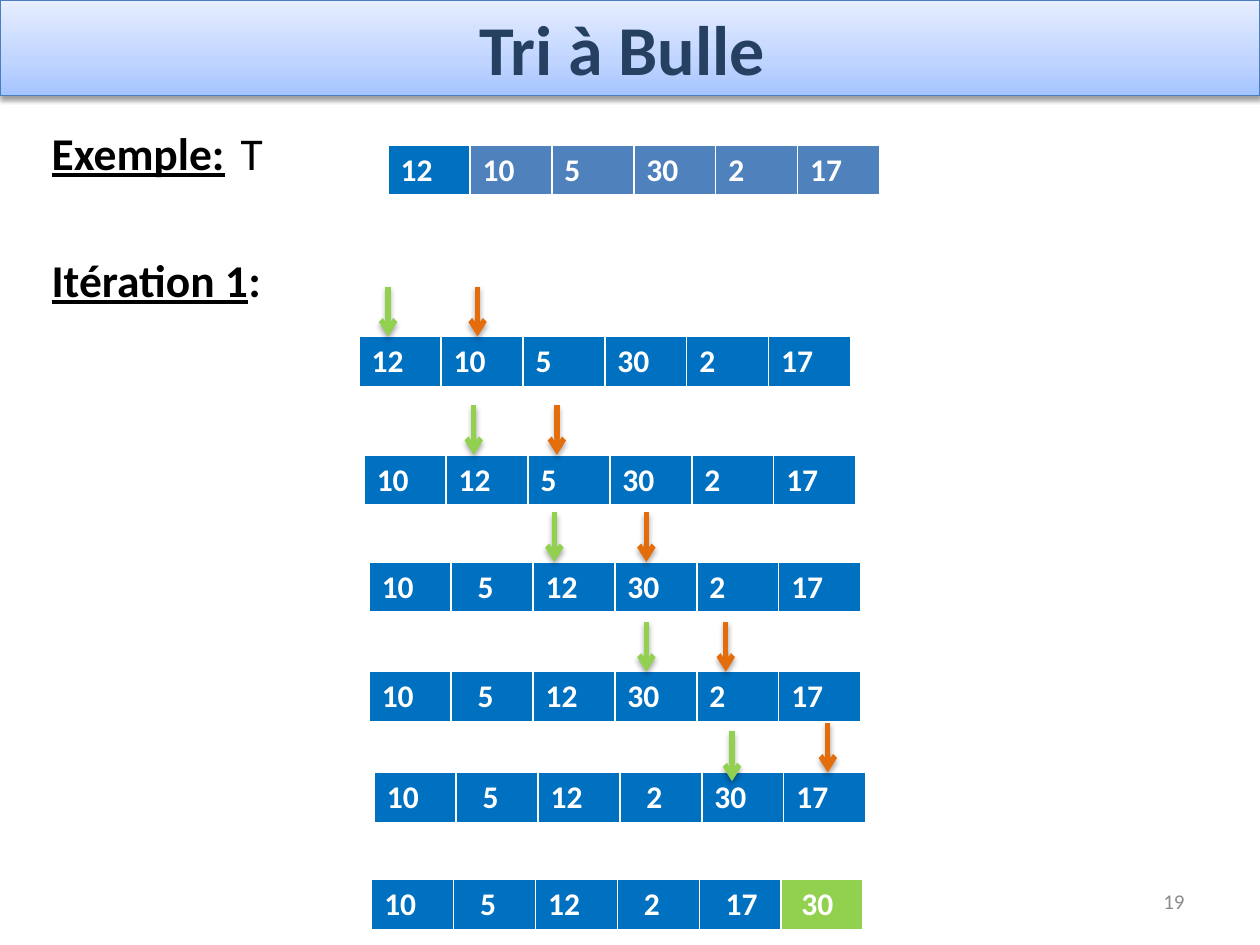
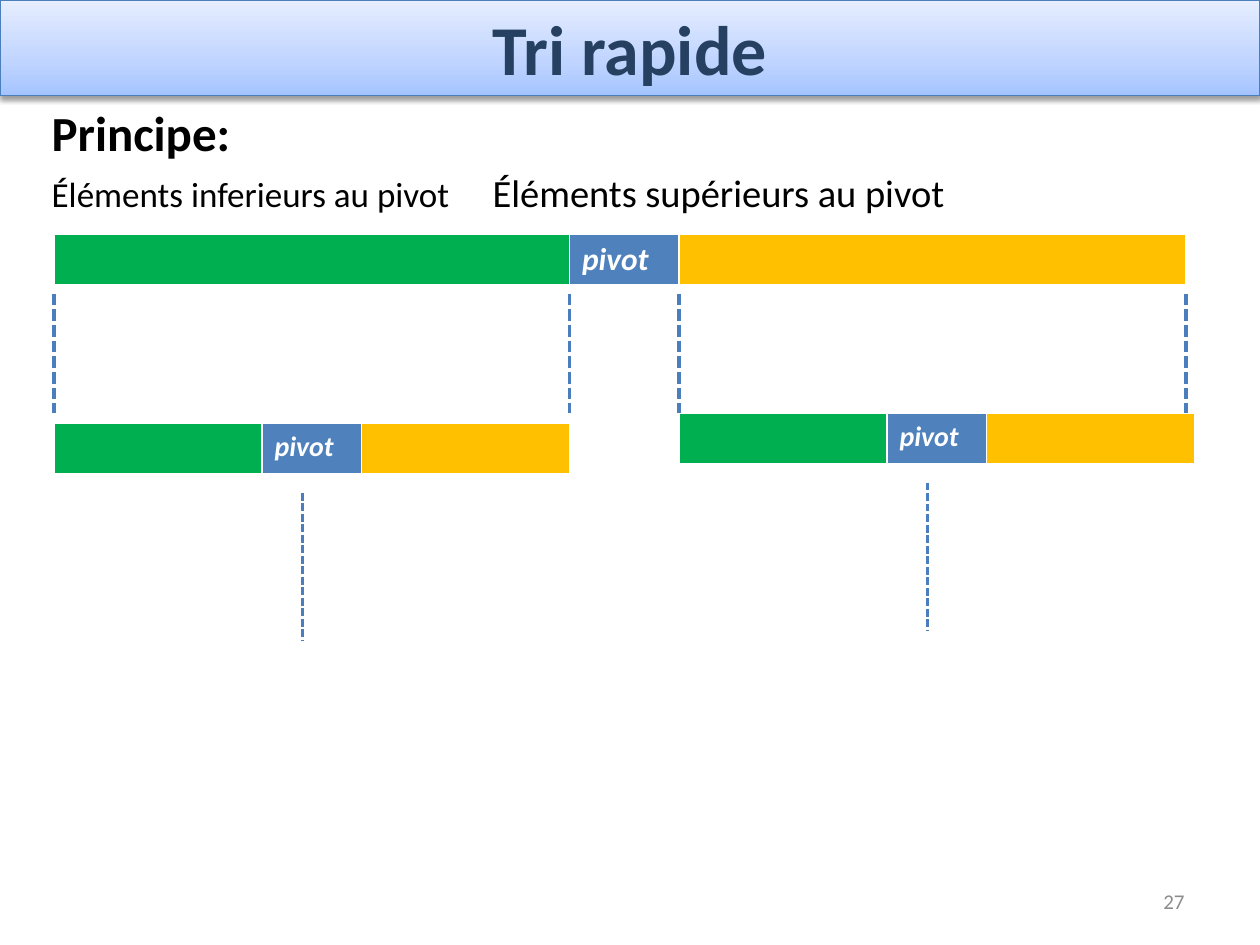
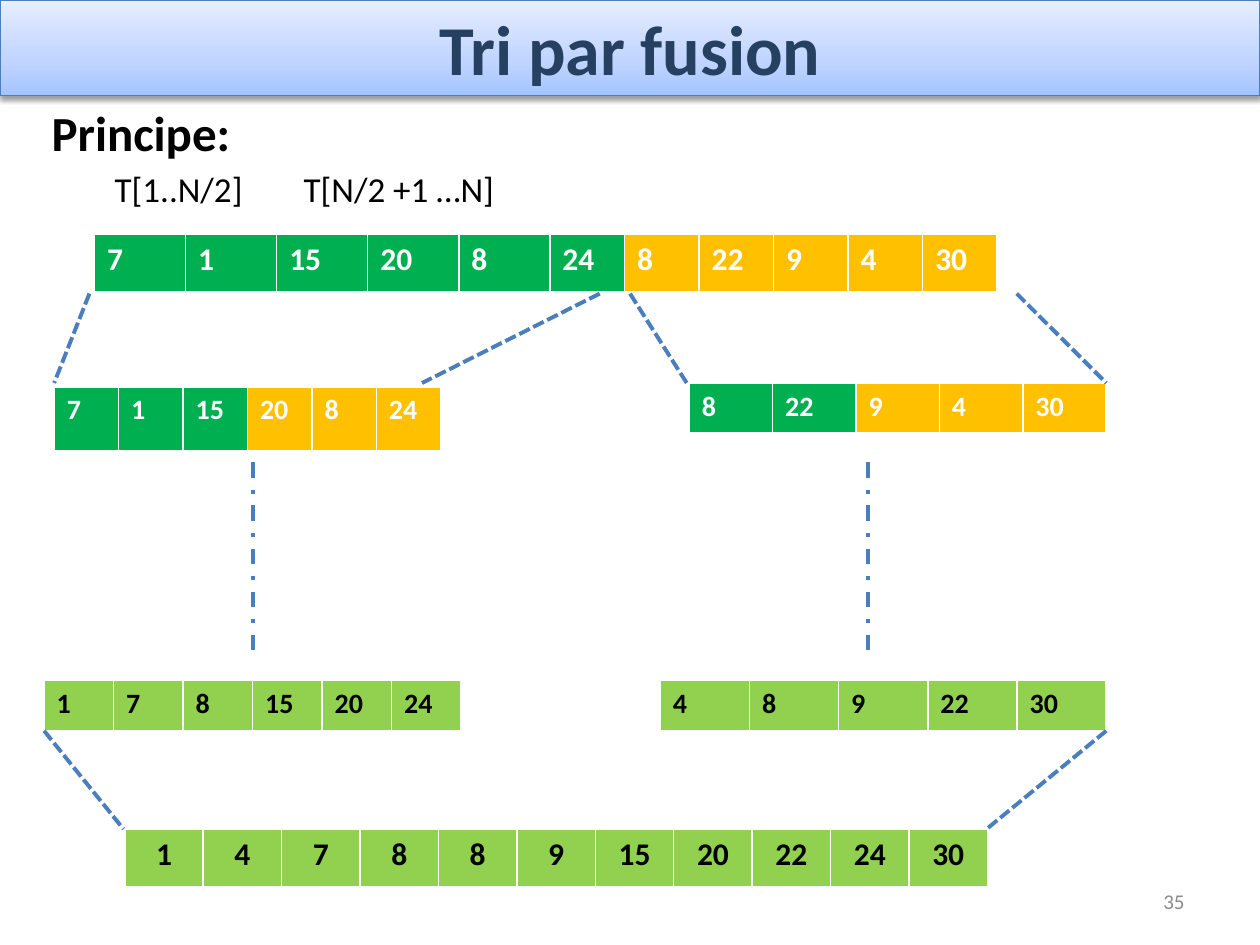
import collections
import copy
import itertools

import pptx
import pptx.dml.color
import pptx.enum.dml
import pptx.enum.shapes
import pptx.enum.text
import pptx.oxml
import pptx.oxml.ns
import pptx.util

SLIDE_WIDTH = pptx.util.Inches(10)
SLIDE_HEIGHT = pptx.util.Inches(7.5)
COLUMN = SLIDE_WIDTH / 100
ROW = SLIDE_HEIGHT / 75
FONT = "Calibri"
COLORS = {
    "title": "254061", "text": "000000", "white": "FFFFFF", "number": "8C8C8C",
    "line": "4B7EBC", "blue": "0070C0", "accent": "4F81BD", "green": "00B050",
    "amber": "FFC000", "lime": "92D050", "orange": "E46C0A",
}
BAND_STOPS = [(0, "A4C4FF"), (0.35, "BFD4FF"), (1, "E6EEFF")]
BORDERS = {"lnL": 12700, "lnR": 12700, "lnT": 12700, "lnB": 38100}
ALIGN = pptx.enum.text.PP_ALIGN
DASH = pptx.enum.dml.MSO_LINE
MIDDLE = pptx.enum.text.MSO_ANCHOR.MIDDLE
SHADOW = (
    '<a:outerShdw blurRad="40000" dist="{distance}" dir="5400000" rotWithShape="0">'
    '<a:srgbClr val="000000"><a:alpha val="{alpha}"/></a:srgbClr></a:outerShdw>'
)
BODY_FORMAT = {"size": 26, "bold": True}


class Box(collections.namedtuple("Box", "left top width height")):
    def within(self, left, top, width=0, height=0):
        return Box(self.left + left, self.top + top, width, height)

    def frame(self):
        return {
            "left": columns(self.left), "top": rows(self.top),
            "width": columns(self.width), "height": rows(self.height),
        }


def columns(count):
    return round(count * COLUMN)


def rows(count):
    return round(count * ROW)


def rgb(name):
    return pptx.dml.color.RGBColor.from_string(COLORS[name])


def assign(target, values):
    for name, value in values.items():
        setattr(target, name, value)


def append_xml(parent, tag, attributes="", content=""):
    namespace = pptx.oxml.ns.nsdecls("a")
    element = pptx.oxml.parse_xml(f"<a:{tag} {namespace} {attributes}>{content}</a:{tag}>")
    parent.append(element)


def add_run(paragraph, text, size, color="text", **values):
    run = paragraph.add_run()
    run.text = text
    assign(run.font, {"name": FONT, "size": pptx.util.Pt(size), **values})
    run.font.color.rgb = rgb(color)


def set_effects(shape, distance=0, alpha=0):
    shadow = SHADOW.format(distance=distance, alpha=alpha) if alpha else ""
    append_xml(shape._element.spPr, "effectLst", content=shadow)


def fill_title(title, box, text):
    assign(title, box.frame())
    title.fill.gradient()
    title.fill.gradient_angle = 90
    stop_list = title._element.spPr.find(".//" + pptx.oxml.ns.qn("a:gsLst"))
    stop_list.append(copy.deepcopy(stop_list[0]))
    for stop, (position, color) in zip(title.fill.gradient_stops, BAND_STOPS):
        stop.position = position
        stop.color.rgb = pptx.dml.color.RGBColor.from_string(color)
    title.line.color.rgb = rgb("line")
    title.line.width = pptx.util.Pt(0.75)
    set_effects(title, 20000, 38000)
    title.text_frame.vertical_anchor = MIDDLE
    paragraph = title.text_frame.paragraphs[0]
    paragraph.alignment = ALIGN.CENTER
    add_run(paragraph, text, 40, "title", bold=True)


def fill_body(body, box, lines):
    assign(body, box.frame())
    frame = body.text_frame
    assign(frame, {
        "auto_size": pptx.enum.text.MSO_AUTO_SIZE.NONE,
        "vertical_anchor": pptx.enum.text.MSO_ANCHOR.TOP,
    })
    for index, (space, tabs, runs) in enumerate(lines):
        paragraph = frame.add_paragraph() if index else frame.paragraphs[0]
        properties = paragraph._p.get_or_add_pPr()
        properties.set("marL", "0")
        properties.set("indent", "0")
        append_xml(properties, "buNone")
        stops = "".join(f'<a:tab pos="{columns(tab)}" algn="l"/>' for tab in tabs)
        append_xml(properties, "tabLst", content=stops)
        paragraph.space_before = pptx.util.Pt(space)
        for text, values in runs:
            add_run(paragraph, text, **{**BODY_FORMAT, **values})


def add_slide_number(slide, box, number):
    frame = slide.shapes.add_textbox(**box.frame()).text_frame
    assign(frame, {"word_wrap": True, "vertical_anchor": MIDDLE})
    frame.paragraphs[0].alignment = ALIGN.RIGHT
    add_run(frame.paragraphs[0], number, 12, "number")


def add_base_slide(presentation, title, body_top, lines, number):
    slide = presentation.slides.add_slide(presentation.slide_layouts[1])
    fill_title(slide.shapes.title, Box(0, 0, 100, 7.6), title)
    fill_body(slide.placeholders[1], Box(3.1, body_top, 93.8, 60.9), lines)
    add_slide_number(slide, Box(71.7, 69.5, 23.3, 4), number)
    return slide


def add_array(slide, box, values, fills, widths=None, indents=None,
              alignment=ALIGN.LEFT, size=18, **font):
    count = len(values)
    widths = widths or [box.width / count] * count
    indents = indents or {}
    table = slide.shapes.add_table(1, count, **box.frame()).table
    for index, (value, fill, width) in enumerate(zip(values, fills, widths)):
        table.columns[index].width = columns(width)
        cell = table.cell(0, index)
        cell.margin_left = columns(1 + indents.get(index, 0))
        white = f'<a:solidFill><a:srgbClr val="{COLORS["white"]}"/></a:solidFill>'
        for tag, thickness in BORDERS.items():
            append_xml(cell._tc.get_or_add_tcPr(), tag, f'w="{thickness}"', white)
        cell.fill.solid()
        cell.fill.fore_color.rgb = rgb(fill)
        if value:
            paragraph = cell.text_frame.paragraphs[0]
            paragraph.alignment = alignment
            add_run(paragraph, value, size, **{"color": "white", "bold": True, **font})


def add_line(slide, start, end, color="line", width=2.25, dash=None, arrow=False):
    connector = slide.shapes.add_connector(
        pptx.enum.shapes.MSO_CONNECTOR.STRAIGHT,
        columns(start.left), rows(start.top), columns(end.left), rows(end.top))
    line = connector.line
    line.color.rgb = rgb(color)
    assign(line, {"width": pptx.util.Pt(width), "dash_style": dash})
    if arrow:
        append_xml(line._get_or_add_ln(), "tailEnd", 'type="arrow"')
        set_effects(connector, 23000, 35000)
    else:
        set_effects(connector)


def draw_bubble_passes(slide, box):
    passes = [
        (0, 4, "12 10 5 30 2 17", {}, [(2.3, 0), (9.4, 0)]),
        (0.4, 13.4, "10 12 5 30 2 17", {}, [(9.1, 0), (15.7, 0)]),
        (0.8, 21.9, "10 5 12 30 2 17", {1: 1.1}, [(15.5, 0), (22.8, 0)]),
        (0.8, 30.6, "10 5 12 30 2 17", {1: 1.1}, [(22.8, 0), (29.1, 0)]),
        (1.2, 38.6, "10 5 12 2 30 17", {1: 1.1, 3: 1.1}, [(29.6, 0.7), (37.2, 0)]),
        (1, 47.1, "10 5 12 2 17 30", {1: 1.1, 3: 1.1, 4: 1.1, 5: 0.6}, []),
    ]
    for left, top, values, indents, arrows in passes:
        last_fill = "blue" if arrows else "lime"
        add_array(slide, box.within(left, top, 39, 4.1), values.split(),
                  ["blue"] * 5 + [last_fill], indents=indents)
        for color, (column, drop) in zip(["lime", "orange"], arrows):
            tip = top + drop
            add_line(slide, box.within(column, tip - 3.95), box.within(column, tip),
                     color, 3, arrow=True)


def add_partition(slide, box, widths, size):
    add_array(slide, box, ["", "pivot", ""], ["green", "accent", "amber"],
              widths, size=size, italic=True)


def draw_pivot_tree(slide, box):
    widths = [40.9, 8.7, 40.2]
    edges = [0, *itertools.accumulate(widths)]
    add_partition(slide, box.within(0, 0, box.width, 4.1), widths, 18)
    for left, top in [(0, 15), (edges[2], 14.2)]:
        half = box.within(left, top, 40.9, 4.1)
        add_partition(slide, half, [16.5, 7.9, 16.5], 16)
        add_line(slide, half.within(19.7, 5.5), half.within(19.7, 17.3),
                 width=1.5, dash=DASH.SQUARE_DOT)
    for edge in edges:
        add_line(slide, box.within(edge, 4.7), box.within(edge, 14.2),
                 dash=DASH.SQUARE_DOT)


def draw_merge_tree(slide, box):
    add_array(slide, box.within(4, 0, 71.7, 4.7), "7 1 15 20 8 24 8 22 9 4 30".split(),
              ["green"] * 6 + ["amber"] * 5, [7.23] * 5 + [5.92] * 6)
    halves = [
        (box.within(0.8, 12.1, 30.7, 5.2), "7 1 15 20 8 24", 3),
        (box.within(51.2, 11.8, 33.1, 4.1), "8 22 9 4 30", 2),
    ]
    for place, values, split in halves:
        cells = values.split()
        fills = ["green"] * split + ["amber"] * (len(cells) - split)
        add_array(slide, place, cells, fills, size=16)
    sorted_arrays = [
        (box.within(0, 35.4, 33.1, 4.1), "1 7 8 15 20 24", 16, ALIGN.LEFT),
        (box.within(48.9, 35.4, 35.4, 4.1), "4 8 9 22 30", 16, ALIGN.LEFT),
        (box.within(6.4, 47.2, 68.5, 4.7), "1 4 7 8 8 9 15 20 22 24 30", 18, ALIGN.CENTER),
    ]
    for place, values, size, alignment in sorted_arrays:
        cells = values.split()
        add_array(slide, place, cells, ["lime"] * len(cells), size=size,
                  alignment=alignment, color="text")
    split_links = [(44.1, 30), (46.5, 51), (3.6, 0.8), (77.2, 84.3)]
    merge_links = [(0, 6.3), (84.3, 74.8)]
    levels = [
        (split_links, 4.7, 11.8, DASH.SQUARE_DOT),
        ([(16.6, 16.6), (65.4, 65.4)], 18.1, 33.9, DASH.DASH_DOT),
        (merge_links, 39.4, 47.2, DASH.SQUARE_DOT),
    ]
    for links, top, bottom, dash in levels:
        for start, end in links:
            add_line(slide, box.within(start, top), box.within(end, bottom), dash=dash)


def build_bubble_slide(presentation):
    plain = {"bold": False}
    underlined = {"underline": True}
    lines = [
        (0, [17.9], [("Exemple:", underlined), ("\tT", plain)]),
        (41.5, [], [("Itération 1", underlined), (":", {})]),
    ]
    slide = add_base_slide(presentation, "Tri à Bulle ", 9.4, lines, "19")
    add_array(slide, Box(30.8, 11.5, 39, 4.1), "12 10 5 30 2 17".split(),
              ["blue"] + ["accent"] * 5)
    draw_bubble_passes(slide, Box(28.5, 22.7, 40.2, 51.2))


def build_principle_slide(presentation, title, space, tabs, captions, number):
    lines = [
        (0, [], [("Principe:", {"size": 28})]),
        (space, tabs, [(text, {"size": size, "bold": False}) for text, size in captions]),
    ]
    return add_base_slide(presentation, title, 7.6, lines, number)


def main():
    presentation = pptx.Presentation()
    assign(presentation, {"slide_width": SLIDE_WIDTH, "slide_height": SLIDE_HEIGHT})
    build_bubble_slide(presentation)
    slide = build_principle_slide(
        presentation, "Tri rapide", 4.4, [51.1],
        [("Éléments inferieurs au pivot", 20), ("\tÉléments supérieurs au pivot", 22)], "27")
    draw_pivot_tree(slide, Box(4.3, 18.6, 89.8, 32.3))
    slide = build_principle_slide(
        presentation, "Tri par fusion", 4, [13.2, 56.6],
        [("\tT[1..N/2]", 20), ("\tT[N/2 +1 …N]", 20)], "35")
    draw_merge_tree(slide, Box(3.5, 18.6, 84.3, 51.9))
    presentation.save("out.pptx")


if __name__ == "__main__":
    main()
